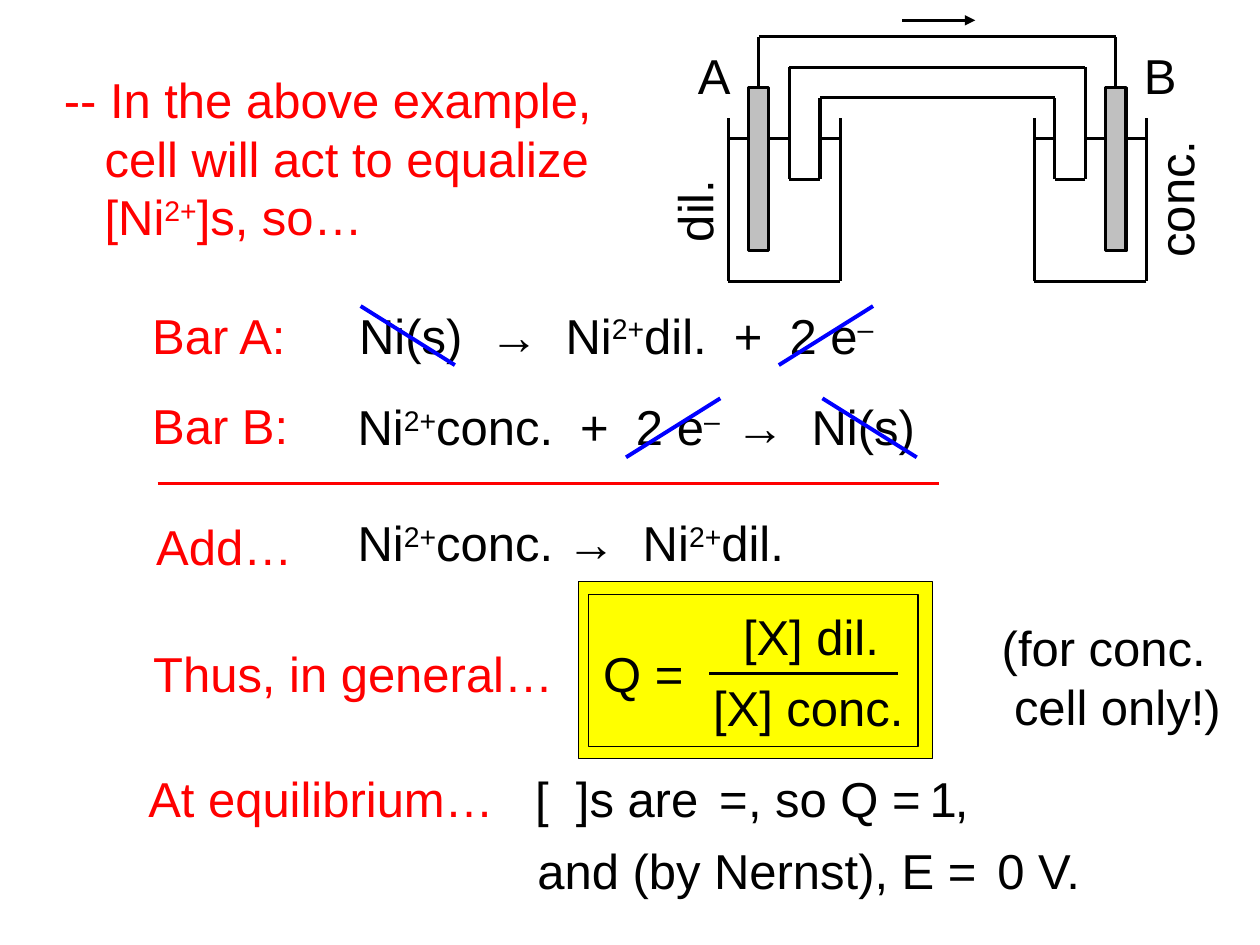
from dataclasses import dataclass

from lxml import etree
from pptx import Presentation
from pptx import util as u
from pptx.dml.color import RGBColor
from pptx.enum import shapes, text
from pptx.oxml.ns import qn

COLORS = {"black": "000000", "red": "FF0000", "blue": "0000FF",
          "yellow": "FFFF00", "gray": "C0C0C0"}
ROW = 1.45  # height of one line of text, cm


@dataclass
class Box:
    """A region of the slide, in centimetres."""
    left: float
    top: float
    width: float
    height: float = ROW

    def inner(self, x, y, width, height=ROW):
        return Box(self.left + x, self.top + y, width, height)

    def lengths(self):
        return [u.Cm(v) for v in (self.left, self.top, self.width, self.height)]


def rgb(name):
    return RGBColor.from_string(COLORS[name])


def add_text(slide, box, content, color="black", middle=True, centered=False,
             rotation=0, hanging=0, second_indent=0):
    """Write one paragraph per line; text between ^ signs is superscript."""
    label = slide.shapes.add_textbox(*box.lengths())
    label.rotation = rotation
    frame = label.text_frame
    frame.word_wrap = False
    frame.auto_size = text.MSO_AUTO_SIZE.SHAPE_TO_FIT_TEXT
    frame.vertical_anchor = text.MSO_ANCHOR.MIDDLE if middle else text.MSO_ANCHOR.TOP
    for number, line in enumerate(content.split("\n")):
        paragraph = frame.add_paragraph() if number else frame.paragraphs[0]
        paragraph.alignment = text.PP_ALIGN.CENTER if centered else text.PP_ALIGN.LEFT
        properties = paragraph._p.get_or_add_pPr()
        if hanging:
            properties.set("marL", str(u.Cm(hanging)))
            properties.set("indent", str(0 if number else -u.Cm(hanging)))
        elif number and second_indent:
            properties.set("marL", str(u.Cm(second_indent)))
        for part, words in enumerate(line.split("^")):
            if not words:
                continue
            run = paragraph.add_run()
            run.text = words
            run.font.size = u.Pt(28)
            run.font.name = "Arial"
            run.font.color.rgb = rgb(color)
            if part % 2:
                run.font._element.set("baseline", "30000")


def add_line(slide, box, start, end, color="black", weight=1.75, arrow=False):
    """Draw a line between two points measured from the box's corner."""
    (x1, y1), (x2, y2) = start, end
    line = slide.shapes.add_connector(
        shapes.MSO_CONNECTOR.STRAIGHT,
        u.Cm(box.left + x1), u.Cm(box.top + y1),
        u.Cm(box.left + x2), u.Cm(box.top + y2))
    line.line.color.rgb = rgb(color)
    line.line.width = u.Pt(weight)
    if arrow:
        etree.SubElement(line.line._get_or_add_ln(), qn("a:tailEnd"), type="triangle")
    etree.SubElement(line._element.spPr, qn("a:effectLst"))
    return line


def add_rectangle(slide, box, fill, weight):
    rectangle = slide.shapes.add_shape(shapes.MSO_SHAPE.RECTANGLE, *box.lengths())
    rectangle.shadow.inherit = False
    rectangle.fill.solid()
    rectangle.fill.fore_color.rgb = rgb(fill)
    rectangle.line.color.rgb = rgb("black")
    rectangle.line.width = u.Pt(weight)
    return rectangle


def draw_cell(slide, box):
    """Two mirrored beakers with bars, salt bridge and wire on a 41-unit grid."""
    columns = 41
    unit = box.width / columns

    def grid_line(start, end):
        return add_line(slide, box, [v * unit for v in start], [v * unit for v in end])

    beaker = [(0, 8), (0, 24), (11, 24), (11, 8)]
    bridge_half = [(columns / 2, 3), (6, 3), (6, 14), (9, 14), (9, 6), (columns / 2, 6)]
    water = [[(0, 10), (2, 10)], [(4, 10), (6, 10)], [(9, 10), (11, 10)]]
    for mirrored in (False, True):
        def side(x):
            return columns - x if mirrored else x

        bar_left = side(4) if mirrored else 2
        bar = add_rectangle(slide, box.inner(bar_left * unit, 5 * unit, 2 * unit, 16 * unit),
                            "gray", 1.75)
        wire = grid_line((side(3), 5), (side(3), 0))
        wire.begin_connect(bar, 0)
        for outline in (beaker, bridge_half, *water):
            points = [(side(x), y) for x, y in outline]
            for start, end in zip(points, points[1:]):
                grid_line(start, end)
    grid_line((3, 0), (columns - 3, 0))
    add_line(slide, box, (3.51, -0.33), (4.98, -0.33), arrow=True)

    add_text(slide, box.inner(-0.86, 0.05, 1.73), "A")
    add_text(slide, box.inner(8.13, 0.05, 1.73), "B")
    add_text(slide, box.inner(-1.85, 2.51, 2.31), "dil.", rotation=270)
    add_text(slide, box.inner(7.29, 2.26, 3.43), "conc.", rotation=270)


def draw_reactions(slide, box):
    """Half-reactions with cancelled terms, and their sum below the rule."""
    for x, y, label in [(0, 0, "Bar A:"), (0, 1.83, "Bar B:"), (0.08, 4.27, "Add…")]:
        add_text(slide, box.inner(x, y, 3.53), label, "red")
    for x, y, width, equation in [
            (4.17, 0, 11.46, "Ni(s)  →  Ni^2+^dil.  +  2 e^–^"),
            (4.14, 1.85, 12.57, "Ni^2+^conc.  +  2 e^–  ^→  Ni(s)"),
            (4.14, 4.19, 9.73, "Ni^2+^conc. →  Ni^2+^dil.")]:
        add_text(slide, box.inner(x, y, width), equation)
    add_line(slide, box, (0.36, 3.73), (box.width, 3.73), "red")
    strike_width, strike_height = 1.9, 1.19
    for x, y, rising in [(12.88, 0.15, True), (9.8, 2.01, True),
                         (4.45, 0.15, False), (13.76, 2.01, False)]:
        low, high = y + strike_height, y
        start, end = (low, high) if rising else (high, low)
        add_line(slide, box, (x, start), (x + strike_width, end), "blue", 2.25)


def draw_quotient(slide, box):
    """Framed fraction for Q."""
    add_rectangle(slide, box, "yellow", 0.75)
    add_rectangle(slide, box.inner(0.2, 0.25, 6.65, 3.07), "yellow", 0.75)
    add_text(slide, box.inner(0.25, 1.12, 2.67), "Q =")
    add_text(slide, box.inner(3.05, 0.38, 3.28), "[X] dil.", middle=False, centered=True)
    add_text(slide, box.inner(2.44, 1.8, 4.39), "[X] conc.", middle=False, centered=True)
    add_line(slide, box, (2.64, 1.85), (6.45, 1.85), weight=2)


def draw_equilibrium(slide, box):
    add_text(slide, box.inner(0, 0, 7.77), "At equilibrium…", "red")
    for x, width, words in [(7.8, 4.09, "[  ]s are"), (11.51, 1.09, "="),
                            (12.09, 3.99, ", so Q ="), (15.75, 1.07, "1"),
                            (16.26, 1.07, ",")]:
        add_text(slide, box.inner(x, 0, width), words)
    for x, width, words in [(7.82, 9.4, "and (by Nernst), E ="), (17.07, 2.26, "0 V.")]:
        add_text(slide, box.inner(x, ROW, width), words, middle=False, centered=True)


def main():
    deck = Presentation()
    deck.slide_width, deck.slide_height = u.Cm(25.4), u.Cm(19.05)
    slide = deck.slides.add_slide(deck.slide_layouts[6])

    add_text(slide, Box(1.04, 1.27, 11.18, 3.81),
             "-- In the above example,\ncell will act to equalize\n[Ni^2+^]s, so…",
             "red", hanging=0.82)
    draw_cell(slide, Box(14.68, 0.74, 8.43, 4.93))
    draw_reactions(slide, Box(2.82, 6.02, 16.1, 5.71))
    add_text(slide, Box(2.84, 12.85, 8.86), "Thus, in general…", "red")
    draw_quotient(slide, Box(11.66, 11.73, 7.14, 3.56))
    add_text(slide, Box(19.61, 12.32, 5.28, 2.64), "(for conc.\ncell only!)",
             middle=False, centered=True, second_indent=0.55)
    draw_equilibrium(slide, Box(2.74, 15.37, 19.33, 2 * ROW))
    deck.save("out.pptx")


if __name__ == "__main__":
    main()
